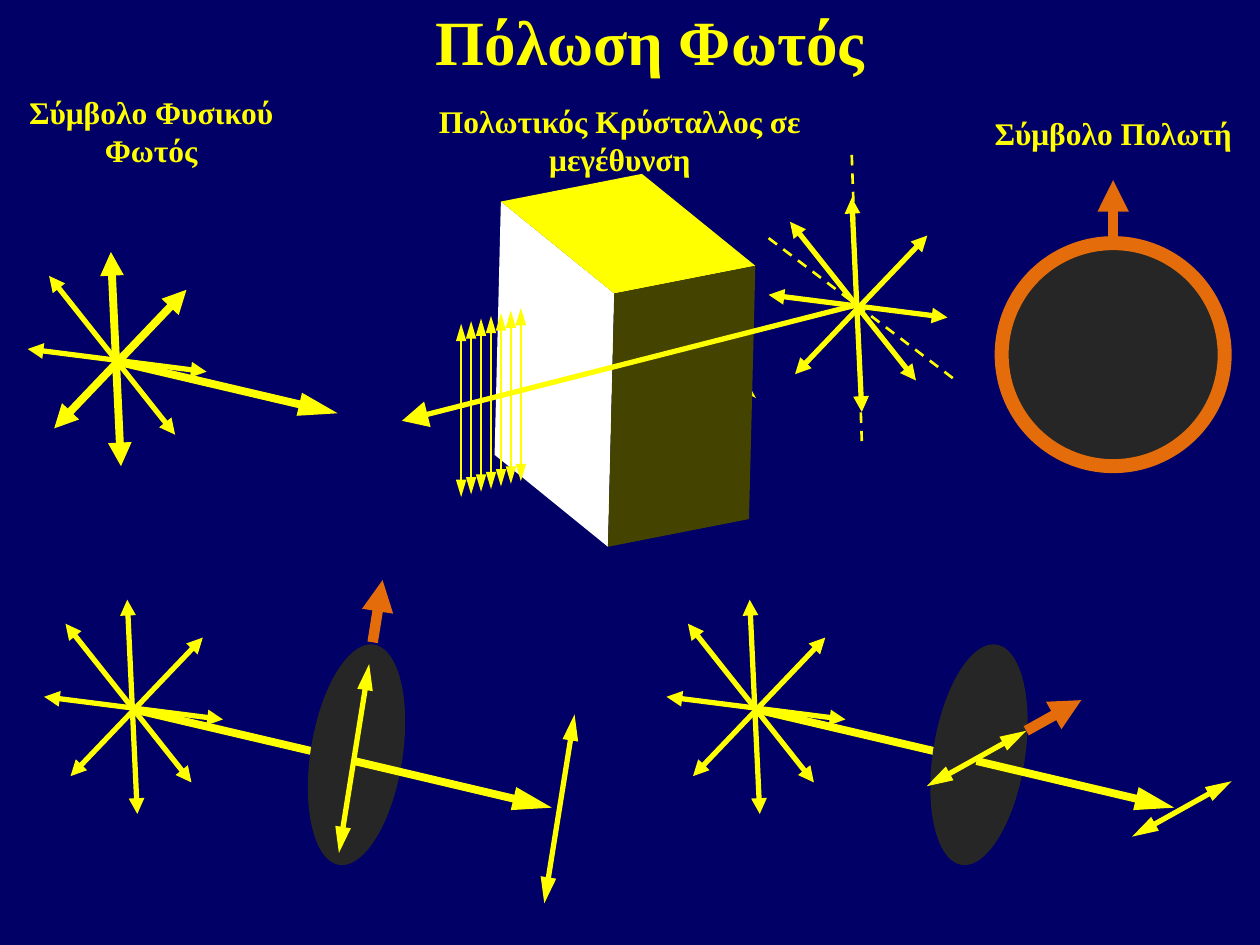
import math

import lxml.etree
import pptx
import pptx.dml.color
import pptx.enum.dml
import pptx.enum.shapes
import pptx.enum.text
import pptx.oxml.ns
import pptx.util

# The slide is a grid of 100 columns by 75 rows; every length is in cells.
CELL = pptx.util.Inches(0.1)
COLUMNS, ROWS = 100, 75
YELLOW, ORANGE, DARK, NAVY = "FFFF00", "E46C0A", "262626", "000066"
STAR_RAYS = [
    ((0, 7.7), (14.2, 9.5)),
    ((1.7, 1.9), (11.7, 14.5)),
    ((2.1, 14), (12.6, 3)),
    ((6.6, 0), (7.4, 17)),
]


def cells(count):
    return round(count * CELL)


def color(hex_value):
    return pptx.dml.color.RGBColor.from_string(hex_value)


def add_line(slide, start, end, width=3, line_color=YELLOW, head=None, tail=None, dashed=False):
    """Draw a line; head and tail are (width, length) of the arrowheads."""
    connector = slide.shapes.add_connector(
        pptx.enum.shapes.MSO_CONNECTOR.STRAIGHT, *map(cells, (*start, *end)))
    connector.line.color.rgb = color(line_color)
    connector.line.width = pptx.util.Pt(width)
    if dashed:
        connector.line.dash_style = pptx.enum.dml.MSO_LINE.DASH
    outline = connector.line._get_or_add_ln()
    for tag, size in (("a:headEnd", head), ("a:tailEnd", tail)):
        if size:
            arrow = lxml.etree.SubElement(outline, pptx.oxml.ns.qn(tag))
            arrow.set("type", "triangle")
            arrow.set("w", size[0])
            arrow.set("len", size[1])
    lxml.etree.SubElement(connector._element.spPr, pptx.oxml.ns.qn("a:effectLst"))


def add_vibration(slide, start, end, width=3, size=("med", "med")):
    add_line(slide, start, end, width, head=size, tail=size)


def add_label(slide, box, lines, size=18, wrap=False):
    frame = slide.shapes.add_textbox(*map(cells, box)).text_frame
    frame.word_wrap = wrap
    for index, line in enumerate(lines):
        paragraph = frame.paragraphs[0] if index == 0 else frame.add_paragraph()
        paragraph.alignment = pptx.enum.text.PP_ALIGN.CENTER
        run = paragraph.add_run()
        run.text = line
        run.font.name = "Times New Roman"
        run.font.size = pptx.util.Pt(size)
        run.font.bold = True
        run.font.color.rgb = color(YELLOW)


def add_disc(slide, center, width, height, rotation=0, rim=0):
    disc = slide.shapes.add_shape(
        pptx.enum.shapes.MSO_SHAPE.OVAL, cells(center[0] - width / 2),
        cells(center[1] - height / 2), cells(width), cells(height))
    disc.shadow.inherit = False
    disc.rotation = rotation
    disc.fill.solid()
    disc.fill.fore_color.rgb = color(DARK)
    if rim:
        disc.line.color.rgb = color(ORANGE)
        disc.line.width = pptx.util.Pt(rim)
    else:
        disc.line.fill.background()


def add_face(slide, corners, fill):
    builder = slide.shapes.build_freeform(*map(cells, corners[0]))
    builder.add_line_segments([tuple(map(cells, corner)) for corner in corners[1:]])
    face = builder.convert_to_shape()
    face.shadow.inherit = False
    face.fill.solid()
    face.fill.fore_color.rgb = color(fill)
    face.line.fill.background()


def add_star(slide, left, top, widths=(3, 3, 3, 3)):
    """Natural light: four vibrations crossing in one point."""
    for (start, end), width in zip(STAR_RAYS, widths):
        add_vibration(slide, (left + start[0], top + start[1]),
                      (left + end[0], top + end[1]), width)


def add_natural_light(slide, left, top, widths=(3, 3, 3, 3)):
    add_star(slide, left, top, widths)
    add_line(slide, (left + 7.1, top + 8.7), (left + 24.6, top + 12.8), 4.5,
             tail=("med", "lg"))


def add_polarizer_symbol(slide, left, top, size):
    middle = left + size / 2
    add_disc(slide, (middle, top + size / 2), size, size, rim=8)
    add_line(slide, (middle, top - 0.2), (middle, top - 5), 6, ORANGE, tail=("med", "med"))


def add_crystal(slide, left, top, height):
    """A box in perspective; left and top give its upper left front corner."""
    depth, side = (9, 7.3), (11.2, -2.2)

    def corner(along_depth, along_side, down):
        return (left + along_depth * depth[0] + along_side * side[0] - 0.5 * down,
                top + along_depth * depth[1] + along_side * side[1] + height * down)

    add_face(slide, [corner(0, 0, 0), corner(1, 0, 0), corner(1, 0, 1), corner(0, 0, 1)], "FFFFFF")
    add_face(slide, [corner(0, 0, 0), corner(0, 1, 0), corner(1, 1, 0), corner(1, 0, 0)], YELLOW)
    add_face(slide, [corner(1, 0, 0), corner(1, 1, 0), corner(1, 1, 1), corner(1, 0, 1)], "444400")


def add_crystal_scene(slide, left, top):
    add_line(slide, (left + 20.3, top + 8.3), (left + 28.1, top + 16), 1, tail=("med", "lg"))
    add_crystal(slide, left + 7.85, top + 0.4, 20.1)
    for index in range(7):
        column, row = left + 4.7 + 0.79 * index, top + 10.1 - 0.21 * index
        add_vibration(slide, (column, row), (column, row + 13.75), 1, ("med", "lg"))
    add_line(slide, (left + 29.1, top + 3.3), (left + 44.1, top + 14.7), 1.5, dashed=True)
    add_line(slide, (left + 35.7, top - 3.3), (left + 36.5, top + 19.4), 1.5, dashed=True)
    add_star(slide, left + 29.1, top + 0.1)
    add_line(slide, (left + 36.1, top + 8.6), (left, top + 17.8), tail=("lg", "lg"))


def add_polarizer_scene(slide, left, top, axis, reach):
    """Light through a polarizer; axis is half a vibration, reach the rim in such halves."""
    center = (left + 24.6, top + 12.6)
    add_natural_light(slide, left, top)
    add_disc(slide, (left + 24.8, top + 12.3), 7.3, 17.7, rotation=9)
    rim = [middle + reach * part for middle, part in zip(center, axis)]
    tip = [edge + 5 * part / math.hypot(*axis) for edge, part in zip(rim, axis)]
    add_line(slide, rim, tip, 6, ORANGE, tail=("med", "med"))
    add_line(slide, (left + 24.6, top + 12.8), (left + 40.3, top + 16.5), 4.5,
             tail=("med", "lg"))
    for column, row in (center, (left + 40.9, top + 16.6)):
        add_vibration(slide, (column + axis[0], row + axis[1]),
                      (column - axis[0], row - axis[1]), size=("med", "lg"))


def main():
    presentation = pptx.Presentation()
    presentation.slide_width = cells(COLUMNS)
    presentation.slide_height = cells(ROWS)
    slide = presentation.slides.add_slide(presentation.slide_layouts[6])
    slide.background.fill.solid()
    slide.background.fill.fore_color.rgb = color(NAVY)

    add_label(slide, (9.1, -0.3, 85, 6.3), ["Πόλωση Φωτός"], 36, wrap=True)
    add_label(slide, (1.2, 6.9, 21.6, 7.1), ["Σύμβολο Φυσικού", "Φωτός"])
    add_label(slide, (33.1, 7.6, 32.2, 7.1), ["Πολωτικός Κρύσταλλος σε μεγέθυνση"], wrap=True)
    add_label(slide, (77.8, 8.6, 21.1, 4), ["Σύμβολο Πολωτή"])

    add_natural_light(slide, 2.2, 20, (3, 3, 4.5, 4.5))
    add_crystal_scene(slide, 31.9, 15.6)
    add_polarizer_symbol(slide, 79.5, 19.3, 17.7)
    add_polarizer_scene(slide, 3.5, 47.6, axis=(1.2, -7.5), reach=1.23)
    add_polarizer_scene(slide, 52.9, 47.6, axis=(3.95, -2.2), reach=1)

    presentation.save("out.pptx")


if __name__ == "__main__":
    main()
